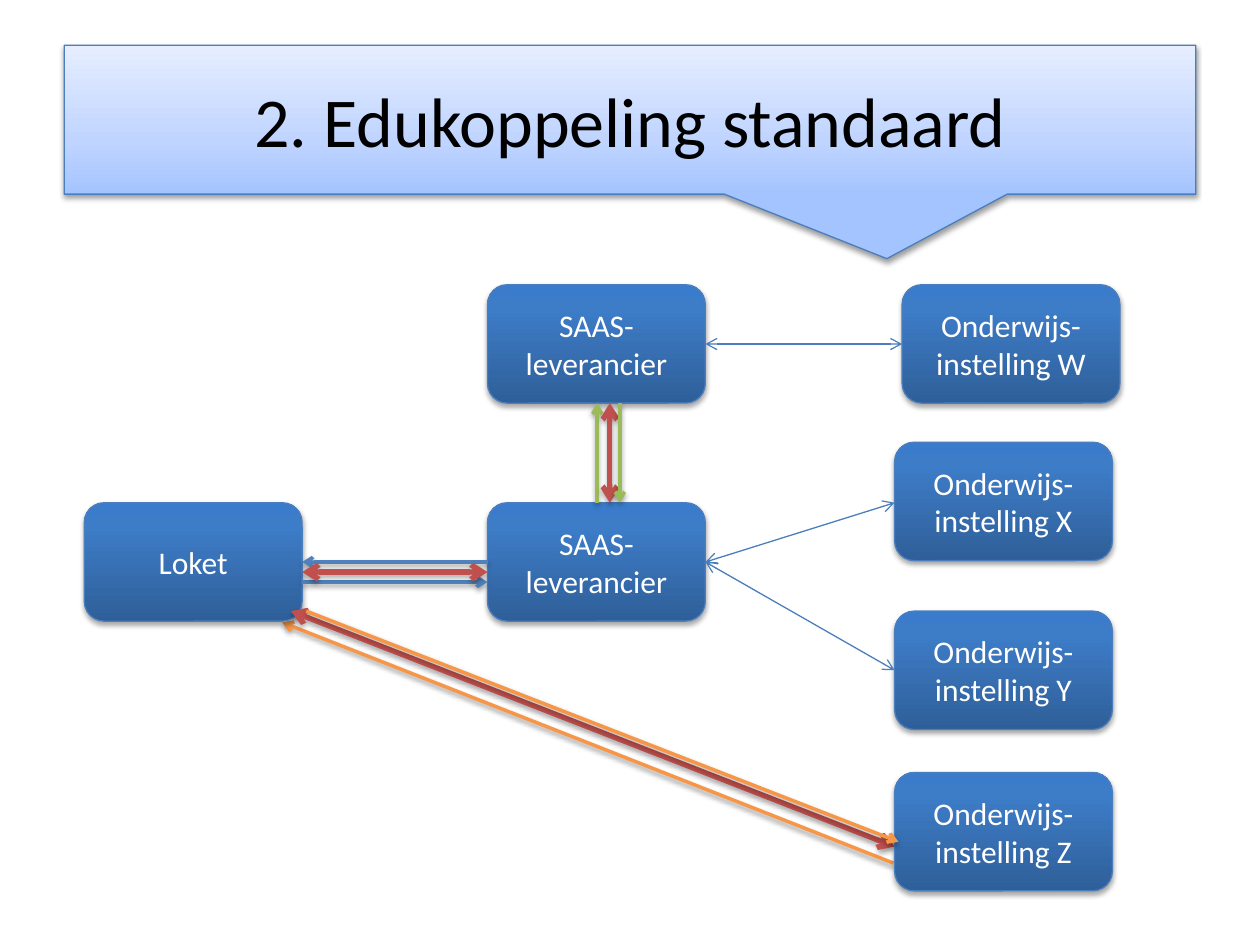
from dataclasses import dataclass

from lxml.etree import SubElement
from pptx import Presentation
from pptx.dml.color import RGBColor
from pptx.enum.shapes import MSO_CONNECTOR, MSO_SHAPE
from pptx.enum.text import MSO_ANCHOR, PP_ALIGN
from pptx.oxml.ns import qn
from pptx.util import Pt

WHITE = RGBColor(0xFF, 0xFF, 0xFF)
BLACK = RGBColor(0x00, 0x00, 0x00)
EDGE = RGBColor(0x4B, 0x7E, 0xBC)
BLUE = RGBColor(0x4F, 0x81, 0xBD)
RED = RGBColor(0xC0, 0x50, 0x4D)
GREEN = RGBColor(0x9B, 0xBB, 0x59)
ORANGE = RGBColor(0xF7, 0x96, 0x46)

TITLE_STOPS = (
    (0, RGBColor(0xA4, 0xC4, 0xFF)),
    (35, RGBColor(0xBF, 0xD4, 0xFF)),
    (100, RGBColor(0xE6, 0xEE, 0xFF)),
)
NODE_STOPS = (
    (0, RGBColor(0x2F, 0x5F, 0x99)),
    (80, RGBColor(0x3D, 0x7C, 0xC7)),
    (100, RGBColor(0x3A, 0x7C, 0xCB)),
)
NODE_W, NODE_H = 124.5, 67.7
LOKET_X, SAAS_X, SCHOOL_X = 48.2, 278.6, 511.2
TOP_Y, MID_Y = 162.7, 287.3
LOKET_RIGHT, SAAS_RIGHT = LOKET_X + NODE_W, SAAS_X + NODE_W
TOP_BOTTOM = TOP_Y + NODE_H
MID_CENTER = MID_Y + NODE_H / 2


@dataclass(frozen=True)
class Shadow:
    opacity: int
    distance: float


SOFT = Shadow(38, 1.6)
STRONG = Shadow(35, 1.8)


@dataclass(frozen=True)
class Box:
    text: str
    x: float
    y: float
    w: float = NODE_W
    h: float = NODE_H
    kind: MSO_SHAPE = MSO_SHAPE.ROUNDED_RECTANGLE
    stops: tuple = NODE_STOPS
    size: float = 18
    color: RGBColor = WHITE
    shadow: Shadow = STRONG


@dataclass(frozen=True)
class Link:
    x1: float
    y1: float
    x2: float
    y2: float
    color: RGBColor = EDGE
    width: float = 0.75
    both: bool = True
    shadow: Shadow | None = None


def one_way(x1: float, y1: float, x2: float, y2: float, color: RGBColor) -> Link:
    return Link(x1, y1, x2, y2, color, 2, False, SOFT)


def two_way(x1: float, y1: float, x2: float, y2: float) -> Link:
    return Link(x1, y1, x2, y2, RED, 3, True, STRONG)


def add_color(parent, color: RGBColor):
    return SubElement(parent, qn("a:srgbClr"), val=str(color))


def set_shadow(sp_pr, shadow: Shadow | None) -> None:
    effects = SubElement(sp_pr, qn("a:effectLst"))
    if shadow:
        outer = SubElement(
            effects, qn("a:outerShdw"), blurRad=str(Pt(3.1)),
            dist=str(Pt(shadow.distance)), dir="5400000", rotWithShape="0",
        )
        SubElement(add_color(outer, BLACK), qn("a:alpha"), val=str(shadow.opacity * 1000))


def add_box(shapes, box: Box):
    sp = shapes.add_shape(box.kind, Pt(box.x), Pt(box.y), Pt(box.w), Pt(box.h))
    sp.fill.gradient()
    sp.fill.gradient_angle = 90
    stop_list = sp.element.spPr.find(".//" + qn("a:gsLst"))
    for stop in list(stop_list):
        stop_list.remove(stop)
    for pos, color in box.stops:
        add_color(SubElement(stop_list, qn("a:gs"), pos=str(pos * 1000)), color)
    sp.line.color.rgb = EDGE
    sp.line.width = Pt(0.75)
    set_shadow(sp.element.spPr, box.shadow)
    tf = sp.text_frame
    tf.word_wrap = True
    tf.vertical_anchor = MSO_ANCHOR.MIDDLE
    p = tf.paragraphs[0]
    p.text = box.text
    p.alignment = PP_ALIGN.CENTER
    p.font.name = "Calibri"
    p.font.size = Pt(box.size)
    p.font.color.rgb = box.color
    return sp


def add_link(shapes, link: Link) -> None:
    line = shapes.add_connector(
        MSO_CONNECTOR.STRAIGHT, Pt(link.x1), Pt(link.y1), Pt(link.x2), Pt(link.y2)
    )
    line.line.color.rgb = link.color
    line.line.width = Pt(link.width)
    sp_pr = line.element.spPr
    ln = sp_pr.find(qn("a:ln"))
    for end in ("a:headEnd", "a:tailEnd") if link.both else ("a:tailEnd",):
        SubElement(ln, qn(end), type="arrow")
    set_shadow(sp_pr, link.shadow)


TITLE = Box(
    "2. Edukoppeling standaard", 36.7, 25.9, 646.6, 85,
    MSO_SHAPE.RECTANGULAR_CALLOUT, TITLE_STOPS, 40, BLACK, SOFT,
)
NODES = [
    Box("Loket", LOKET_X, MID_Y),
    Box("SAAS-leverancier", SAAS_X, MID_Y),
    Box("Onderwijs- instelling X", SCHOOL_X, 252.7),
    Box("Onderwijs- instelling Y", SCHOOL_X, 349.2),
    Box("SAAS-leverancier", SAAS_X, TOP_Y),
    Box("Onderwijs- instelling W", 515.5, TOP_Y),
]
NODE_Z = Box("Onderwijs- instelling Z", SCHOOL_X, 441.4)
LINKS = [
    Link(SAAS_RIGHT, MID_CENTER, SCHOOL_X, 287.3),
    Link(SAAS_RIGHT, MID_CENTER, SCHOOL_X, 383),
    Link(SAAS_RIGHT, 196.6, 515.5, 196.6),
    one_way(SAAS_X, MID_CENTER, LOKET_RIGHT, MID_CENTER, BLUE),
    one_way(341.3, MID_Y, 341.3, TOP_BOTTOM, GREEN),
    one_way(LOKET_RIGHT, 332.6, SAAS_X, 332.6, BLUE),
    two_way(LOKET_RIGHT, 326.9, SAAS_X, 326.9),
    two_way(348.5, TOP_BOTTOM, 348.5, MID_Y),
    one_way(354.2, TOP_BOTTOM, 354.2, MID_Y, GREEN),
    two_way(166.3, 349.2, SCHOOL_X, 483.8),
]
Z_TO_LOKET = one_way(510.5, 493.2, 161.3, 355.7, ORANGE)
LOKET_TO_Z = one_way(175, 349.2, 513.4, 481, ORANGE)


def main() -> None:
    prs = Presentation()
    prs.slide_width, prs.slide_height = Pt(720), Pt(540)
    s = prs.slides.add_slide(prs.slide_layouts[6])
    add_link(s.shapes, Z_TO_LOKET)
    callout = add_box(s.shapes, TITLE)
    callout.adjustments[0], callout.adjustments[1] = 0.227, 0.934
    for node in NODES:
        add_box(s.shapes, node)
    for link in LINKS:
        add_link(s.shapes, link)
    add_box(s.shapes, NODE_Z)
    add_link(s.shapes, LOKET_TO_Z)
    prs.save("out.pptx")


if __name__ == "__main__":
    main()
